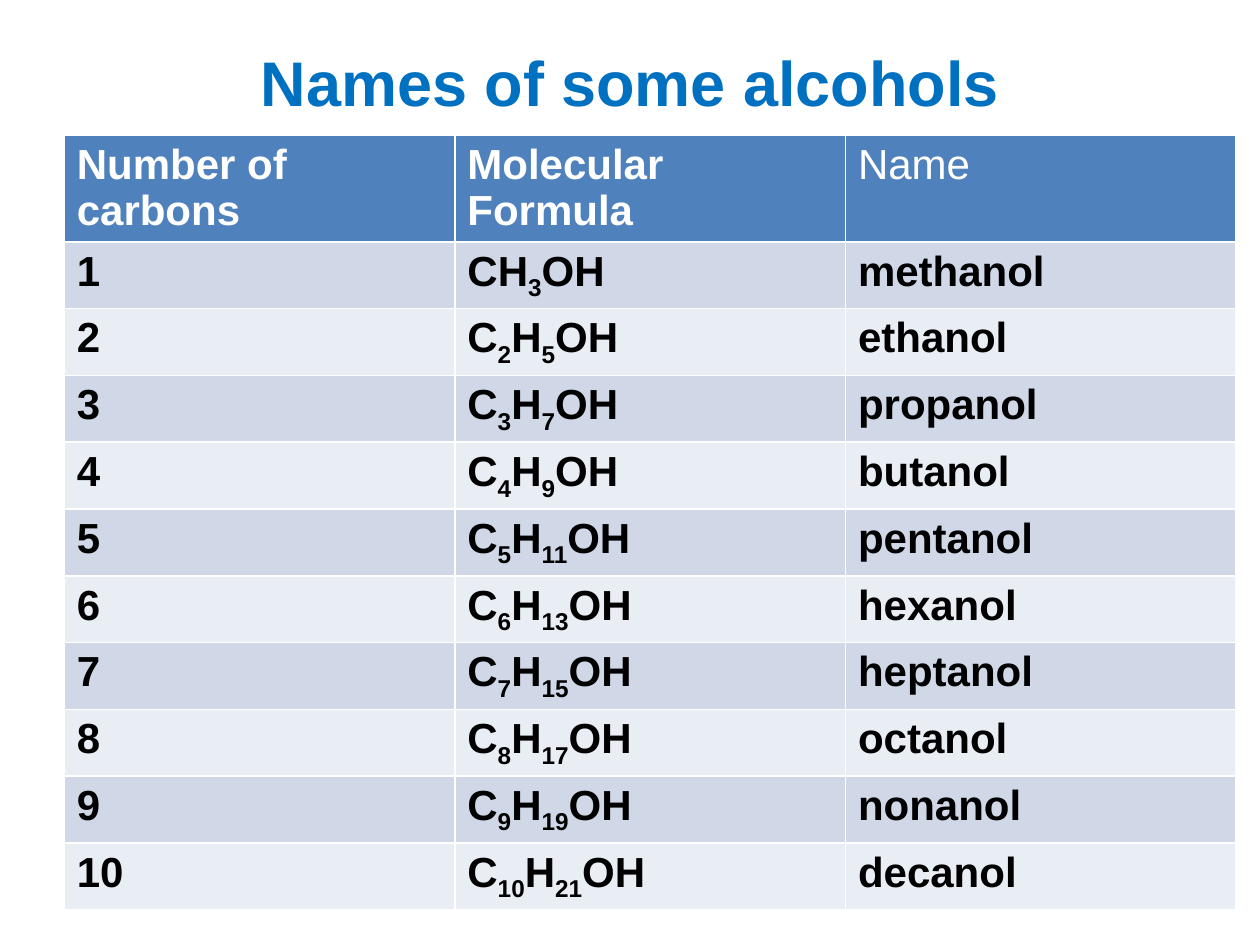
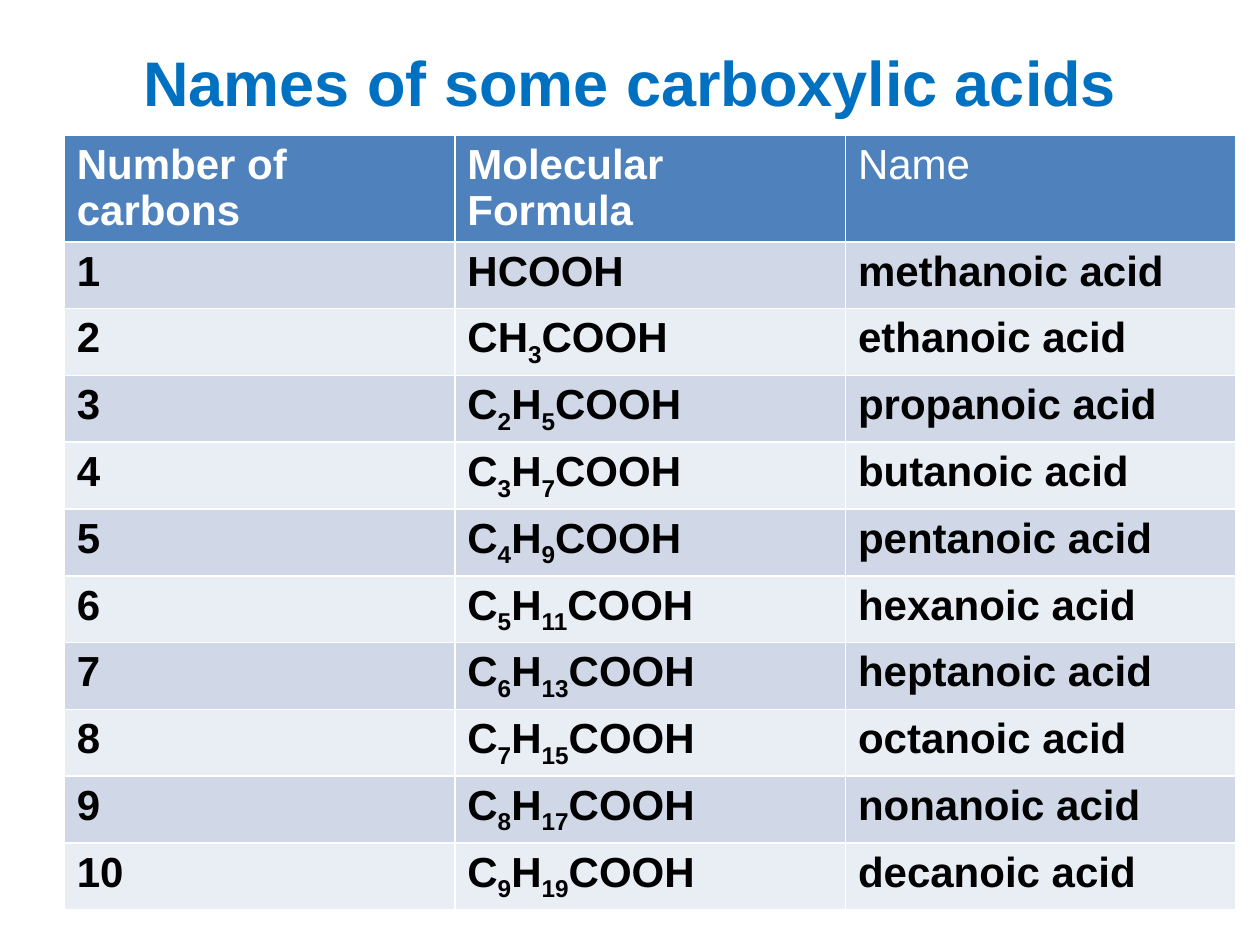
import itertools

import pptx
import pptx.dml.color
import pptx.enum.text
import pptx.util

Inches = pptx.util.Inches
RGBColor = pptx.dml.color.RGBColor

TITLE_BLUE = RGBColor(0x00, 0x70, 0xC0)
HEADER_BLUE = RGBColor(0x4F, 0x81, 0xBD)
BANDS = (RGBColor(0xD0, 0xD8, 0xE8), RGBColor(0xE9, 0xED, 0xF4))
WHITE = RGBColor(0xFF, 0xFF, 0xFF)
BLACK = RGBColor(0x00, 0x00, 0x00)

HEADERS = ("Number of carbons", "Molecular Formula", "Name")
STEMS = ("meth", "eth", "prop", "but", "pent", "hex", "hept", "oct", "non", "dec")


class SlideBuilder:
    font_name = "Arial"
    title_size = 36
    table_size = 24

    def __init__(self, deck):
        self.deck = deck
        self.slide = None

    def add_page(self, title):
        self.slide = self.deck.slides.add_slide(self.deck.slide_layouts[5])
        box = self.slide.shapes.title
        box.left, box.top = Inches(0), Inches(0.13)
        box.width, box.height = Inches(10), Inches(1.03)
        frame = box.text_frame
        frame.text = title
        frame.auto_size = pptx.enum.text.MSO_AUTO_SIZE.NONE
        frame.vertical_anchor = pptx.enum.text.MSO_ANCHOR.MIDDLE
        para = frame.paragraphs[0]
        para.alignment = pptx.enum.text.PP_ALIGN.CENTER
        self.format_span(para.runs[0], self.title_size, TITLE_BLUE)

    def format_span(self, span, size, color, bold=True):
        span.font.name = self.font_name
        span.font.size = pptx.util.Pt(size)
        span.font.color.rgb = color
        span.font.bold = bold

    def fill_cell(self, cell, text, fill, color, bold=True, formula=False):
        cell.fill.solid()
        cell.fill.fore_color.rgb = fill
        para = cell.text_frame.paragraphs[0]
        pieces = [text]
        if formula:
            pieces = ["".join(group) for _, group in itertools.groupby(text, str.isdigit)]
        for piece in pieces:
            span = para.add_run()
            span.text = piece
            self.format_span(span, self.table_size, color, bold)
            if formula and piece.isdigit():
                span.font._element.set("baseline", "-25000")

    def add_table(self, rows):
        frame = self.slide.shapes.add_table(
            len(rows) + 1, len(HEADERS),
            Inches(0.51), Inches(1.07), Inches(9.29), Inches(6.15))
        table = frame.table
        for column in table.columns:
            column.width = Inches(3.1)
        for index, row in enumerate(table.rows):
            row.height = Inches(0.53 if index else 0.85)
        for column, header in enumerate(HEADERS):
            self.fill_cell(table.cell(0, column), header, HEADER_BLUE, WHITE,
                           bold=header != "Name")
        for index, values in enumerate(rows):
            for column, value in enumerate(values):
                self.fill_cell(table.cell(index + 1, column), value,
                               BANDS[index % 2], BLACK, formula=column == 1)


def alkyl_group(carbons):
    carbon = "C" + (str(carbons) if carbons > 1 else "") if carbons else ""
    hydrogens = 2 * carbons + 1
    return carbon + "H" + (str(hydrogens) if hydrogens > 1 else "")


def compound_rows(functional_group, suffix, carbons_in_group):
    return [
        (str(carbons), alkyl_group(carbons - carbons_in_group) + functional_group, stem + suffix)
        for carbons, stem in enumerate(STEMS, start=1)
    ]


def main():
    deck = pptx.Presentation()
    deck.slide_width, deck.slide_height = Inches(10), Inches(7.5)
    builder = SlideBuilder(deck)

    builder.add_page("Names of some alcohols")
    builder.add_table(compound_rows("OH", "anol", 0))

    builder.add_page("Names of some carboxylic acids")
    builder.add_table(compound_rows("COOH", "anoic acid", 1))

    deck.save("out.pptx")


if __name__ == "__main__":
    main()
